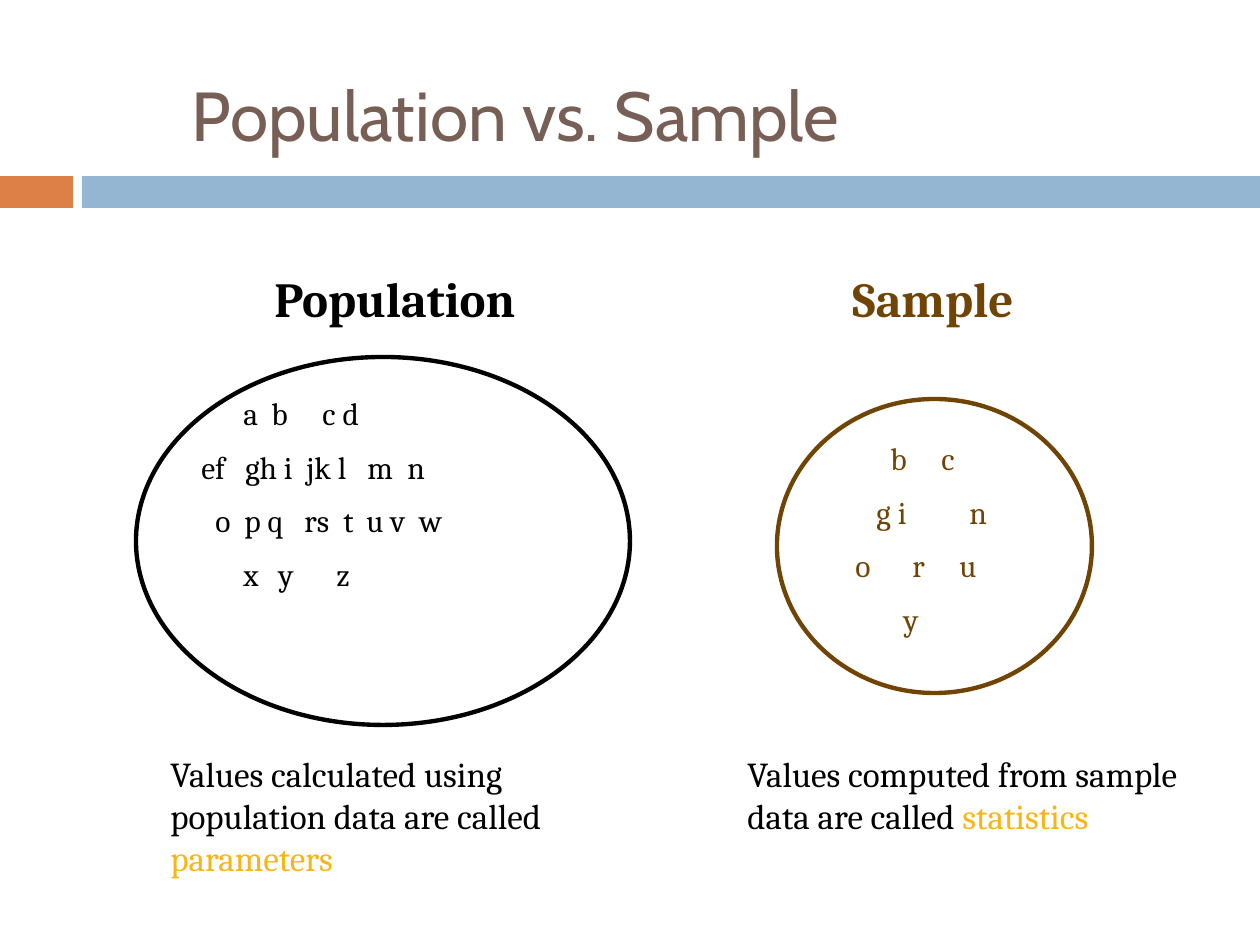
from lxml.etree import SubElement
from pptx import Presentation
from pptx.dml.color import RGBColor
from pptx.enum.shapes import MSO_SHAPE
from pptx.enum.text import MSO_ANCHOR, MSO_AUTO_SIZE
from pptx.oxml.ns import qn
from pptx.util import Emu, Pt

BLACK, BROWN, GOLD = "000000", "704404", "F7B615"
TAUPE, ORANGE, BLUE = "775F55", "DD8047", "94B6D2"


def px(length):
    return Emu(round(length * 914400 / 126))


def color(hex_code):
    return RGBColor.from_string(hex_code)


class SlideBuilder:
    body_font = "Cambria"
    title_font = "Cabin"
    outline_width = Pt(2.5)

    def __init__(self, slide):
        self.slide = slide

    def bar(self, x, y, w, h, fill):
        bar = self.slide.shapes.add_shape(MSO_SHAPE.RECTANGLE, px(x), px(y), px(w), px(h))
        bar.shadow.inherit = False
        bar.fill.solid()
        bar.fill.fore_color.rgb = color(fill)
        bar.line.fill.background()

    def ellipse(self, x, y, w, h, outline):
        ellipse = self.slide.shapes.add_shape(MSO_SHAPE.OVAL, px(x), px(y), px(w), px(h))
        ellipse.shadow.inherit = False
        ellipse.fill.background()
        ellipse.line.color.rgb = color(outline)
        ellipse.line.width = self.outline_width

    def frame(self, x, y, w, h):
        frame = self.slide.shapes.add_textbox(px(x), px(y), px(w), px(h)).text_frame
        frame.word_wrap = True
        return frame

    def run(self, paragraph, text, size, hex_code, bold=False, font=None):
        run = paragraph.add_run()
        run.text = text
        run.font.name = font or self.body_font
        run.font.size = Pt(size)
        run.font.bold = bold
        run.font.color.rgb = color(hex_code)

    def title(self, x, y, w, h, text):
        frame = self.frame(x, y, w, h)
        frame.vertical_anchor = MSO_ANCHOR.MIDDLE
        self.run(frame.paragraphs[0], text, 39.6, TAUPE, font=self.title_font)

    def text(self, x, y, w, h, runs, size, bold=False):
        frame = self.frame(x, y, w, h)
        frame.auto_size = MSO_AUTO_SIZE.SHAPE_TO_FIT_TEXT
        for words, hex_code in runs:
            self.run(frame.paragraphs[0], words, size, hex_code, bold)

    def scatter(self, x, y, w, h, rows, hex_code):
        """Rows of letters, each group set at its own tab stop."""
        frame = self.frame(x, y, w, h)
        frame.auto_size = MSO_AUTO_SIZE.SHAPE_TO_FIT_TEXT
        for index, row in enumerate(rows):
            paragraph = frame.add_paragraph() if index else frame.paragraphs[0]
            tabs = SubElement(paragraph._p.get_or_add_pPr(), qn("a:tabLst"))
            for stop, _ in row:
                if stop:
                    SubElement(tabs, qn("a:tab"), pos=str(px(stop)), algn="l")
            if index:
                paragraph.space_before = Pt(9)
            line = "".join(("\t" if stop else "") + letters for stop, letters in row)
            self.run(paragraph, line, 18, hex_code)


def main():
    deck = Presentation()
    deck.slide_width, deck.slide_height = px(1260), px(945)
    builder = SlideBuilder(deck.slides.add_slide(deck.slide_layouts[6]))

    # Title and band
    builder.bar(0, 176, 73, 32, ORANGE)
    builder.bar(82, 176, 1178, 32, BLUE)
    builder.title(179, 63, 934, 101, "Population vs. Sample")

    # Ellipses
    builder.ellipse(136, 357, 494, 368, BLACK)
    builder.ellipse(777, 399, 315, 294, BROWN)

    # Members of the population and of the sample
    population = [
        [(42, "a"), (70, "b"), (121, "c d")],
        [(0, "ef"), (44, "gh i"), (105, "jk l"), (166, "m"), (206, "n")],
        [(14, "o"), (43, "p q"), (103, "rs"), (142, "t"), (165, "u v"), (218, "w")],
        [(42, "x"), (77, "y"), (135, "z")],
    ]
    sample = [
        [(49, "b"), (100, "c")],
        [(35, "g i"), (128, "n")],
        [(14, "o"), (71, "r"), (118, "u")],
        [(62, "y")],
    ]
    builder.scatter(189, 388, 431, 365, population, BLACK)
    builder.scatter(829, 433, 263, 280, sample, BROWN)

    # Headings
    builder.text(262, 262, 305, 72, [("Population", BLACK)], 28, bold=True)
    builder.text(840, 262, 273, 72, [("Sample", BROWN)], 28, bold=True)

    # Definitions
    builder.text(158, 746, 483, 139, [
        ("Values calculated using population data are called ", BLACK),
        ("parameters", GOLD)], 20)
    builder.text(735, 746, 462, 139, [
        ("Values computed from sample data are called ", BLACK),
        ("statistics", GOLD)], 20)

    deck.save("out.pptx")


if __name__ == "__main__":
    main()
